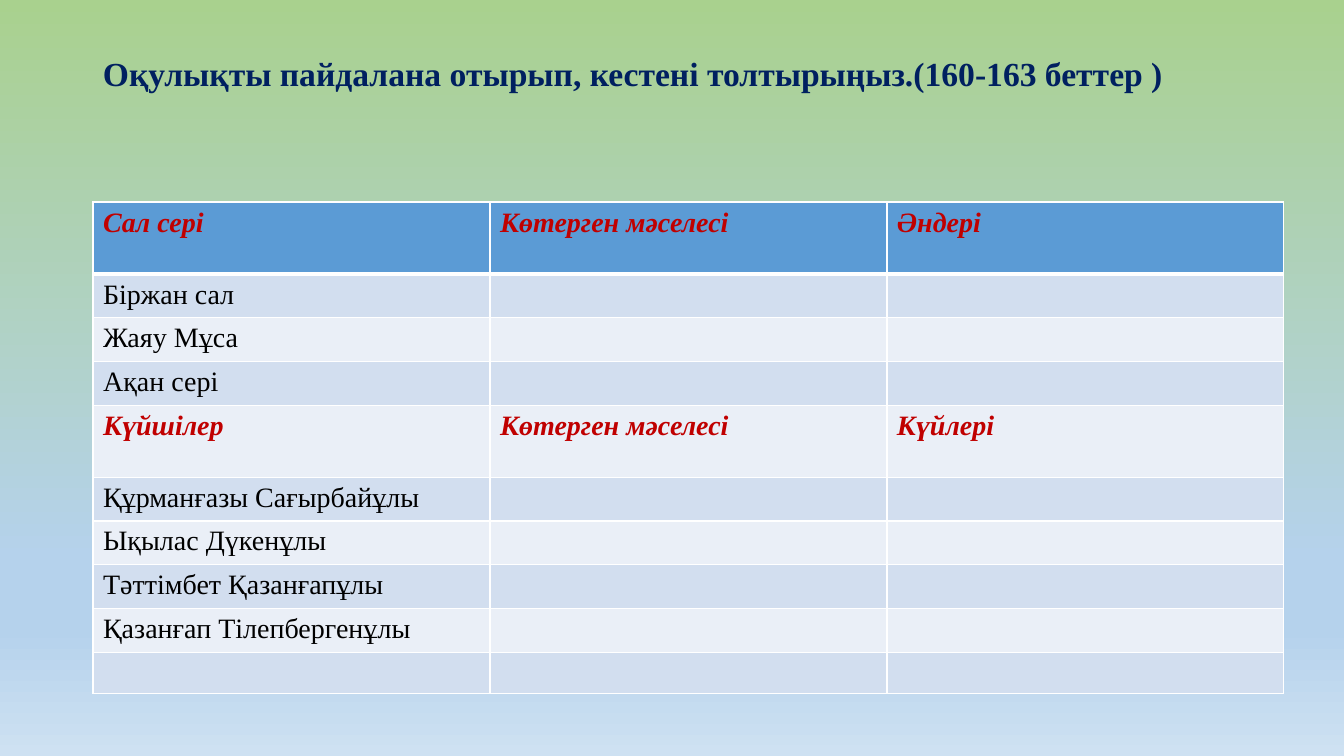
from dataclasses import dataclass
from lxml.etree import SubElement
from pptx import Presentation
from pptx.dml.color import RGBColor
from pptx.enum.text import MSO_ANCHOR
from pptx.oxml import parse_xml
from pptx.oxml.ns import nsdecls, qn
from pptx.util import Emu, Pt


@dataclass(frozen=True)
class Theme:
    font: str = "Times New Roman"
    navy: str = "002060"
    red: str = "C00000"
    black: str = "000000"
    white: str = "FFFFFF"
    blue: str = "5B9BD5"
    bands: tuple = ("EAEFF7", "D2DEEF")
    sky: tuple = ((0, "A9D18E"), (74, "B5D2EC"), (83, "B5D2EC"), (100, "CEE1F2"))
    title: int = 24
    body: int = 20
    thin: int = 1
    thick: int = 3


class Deck:
    def __init__(self, theme, width, height):
        self.theme = theme
        self.show = Presentation()
        self.show.slide_width = self.px(width)
        self.show.slide_height = self.px(height)
        self.slide = self.show.slides.add_slide(self.show.slide_layouts[6])

    def px(self, count):
        return Emu(round(count * 914400 / 100.8))

    def box(self, *sides):
        return [self.px(side) for side in sides]

    def style(self, para, size, color, bold=False, italic=False):
        for run in para.runs:
            font = run.font
            font.name = self.theme.font
            font.size = Pt(size)
            font.bold = bold
            font.italic = italic
            font.color.rgb = RGBColor.from_string(color)

    def sky(self):
        fill = self.slide.background.fill
        fill.gradient()
        fill.gradient_angle = 270
        stops = next(self.slide.element.iter(qn("a:gsLst")))
        for stop in list(stops):
            stops.remove(stop)
        for place, color in self.theme.sky:
            stop = SubElement(stops, qn("a:gs"), pos=str(place * 1000))
            SubElement(stop, qn("a:srgbClr"), val=color)

    def title(self, text, *sides):
        frame = self.slide.shapes.add_textbox(*self.box(*sides)).text_frame
        frame.word_wrap = True
        frame.vertical_anchor = MSO_ANCHOR.MIDDLE
        frame.text = text
        para = frame.paragraphs[0]
        para.line_spacing = 0.9
        self.style(para, self.theme.title, self.theme.navy, bold=True)

    def edge(self, cell, top, bottom):
        thin = self.theme.thin
        widths = {"lnL": thin, "lnR": thin, "lnT": top, "lnB": bottom}
        props = cell._tc.get_or_add_tcPr()
        for index, (side, width) in enumerate(widths.items()):
            props.insert(index, parse_xml(
                f'<a:{side} {nsdecls("a")} w="{Pt(width)}"><a:solidFill>'
                f'<a:srgbClr val="{self.theme.white}"/></a:solidFill></a:{side}>'))

    def table(self, rows, heads, left, top, wide, tall, high):
        theme = self.theme
        cols = len(rows[0])
        sizes = [high if index in heads else tall for index in range(len(rows))]
        frame = self.slide.shapes.add_table(
            len(rows), cols, *self.box(left, top, wide * cols, sum(sizes)))
        grid = frame.table
        for col in grid.columns:
            col.width = self.px(wide)
        for index, (texts, size) in enumerate(zip(rows, sizes)):
            grid.rows[index].height = self.px(size)
            head = index in heads
            for col, text in enumerate(texts):
                cell = grid.cell(index, col)
                cell.text_frame.text = text
                color = theme.red if head else theme.black
                self.style(cell.text_frame.paragraphs[0], theme.body, color, head, head)
                cell.fill.solid()
                fill = theme.bands[index % 2] if index else theme.blue
                cell.fill.fore_color.rgb = RGBColor.from_string(fill)
                self.edge(cell, theme.thick if index == 1 else theme.thin,
                          theme.thick if index == 0 else theme.thin)

    def save(self):
        self.show.save("out.pptx")


def main():
    songs = ["Біржан сал", "Жаяу Мұса", "Ақан сері"]
    tunes = ["Құрманғазы Сағырбайұлы", "Ықылас Дүкенұлы",
             "Тәттімбет Қазанғапұлы", "Қазанғап Тілепбергенұлы", ""]
    rows = [["Сал сері", "Көтерген мәселесі", "Әндері"]]
    rows += [[name, "", ""] for name in songs]
    second = len(rows)
    rows.append(["Күйшілер", "Көтерген мәселесі", "Күйлері"])
    rows += [[name, "", ""] for name in tunes]

    deck = Deck(Theme(), 1344, 756)
    deck.sky()
    deck.title("Оқулықты пайдалана отырып, кестені толтырыңыз.(160-163 беттер )",
               93, 40, 1159, 72)
    deck.table(rows, (0, second), left=93, top=202, wide=397, tall=41, high=72)
    deck.save()


if __name__ == "__main__":
    main()
